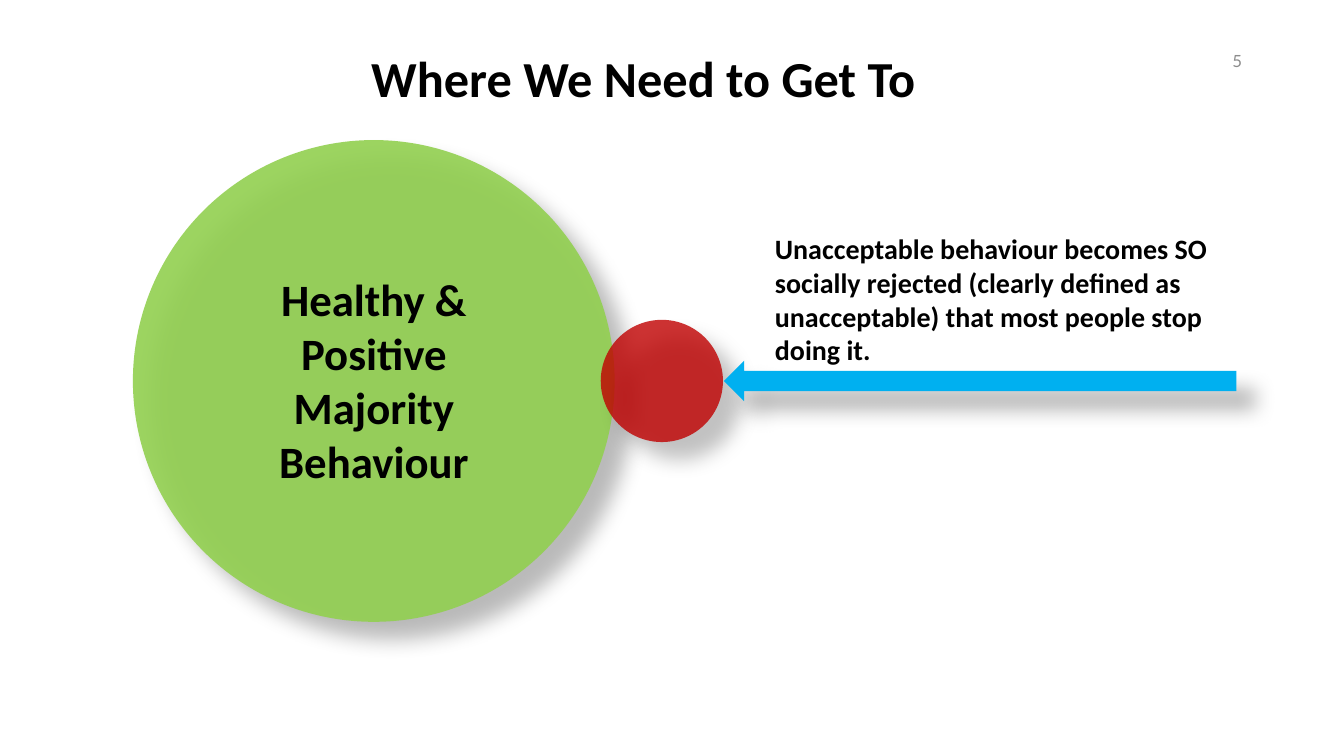
"""Build the slide on where majority behaviour needs to get to."""
import pptx
import pptx.util
import pptx.dml.color
import pptx.enum.shapes
import pptx.enum.text
from lxml import etree
from pptx.oxml.ns import qn

Cm, Pt = pptx.util.Cm, pptx.util.Pt
SHAPE = pptx.enum.shapes.MSO_SHAPE
ANCHOR = pptx.enum.text.MSO_ANCHOR
ALIGN = pptx.enum.text.PP_ALIGN
FIT = pptx.enum.text.MSO_AUTO_SIZE

TITLE = ("Where We Need to Get To", (9.1, 1.07, 14.66, 1.8))
MAJORITY = ("Healthy & Positive Majority Behaviour", (5.92, 6.73, 7.01, 5.74))
REJECTION = (
    "Unacceptable behaviour becomes SO socially rejected "
    "(clearly defined as unacceptable) that most people stop doing it.",
    (19.28, 5.72, 12.06, 3.68),
)
PAGE = ("5", (23.93, 1.02, 7.62, 1.02))

AXIS_Y = 9.6
MAJORITY_LEFT, MAJORITY_SIZE = 3.35, 12.14
MINORITY_LEFT, MINORITY_SIZE = 15.14, 3.08
ARROW_LEFT, ARROW_LENGTH, ARROW_HEIGHT = 18.24, 12.92, 1.02


def color(hex_code):
    return pptx.dml.color.RGBColor.from_string(hex_code)


def write(box, text, size, align=ALIGN.LEFT, font="Calibri", ink="000000", bold=True):
    frame = box.text_frame
    frame.vertical_anchor = ANCHOR.TOP
    frame.word_wrap = True
    paragraph = frame.paragraphs[0]
    paragraph.alignment = align
    run = paragraph.add_run()
    run.text = text
    run.font.name, run.font.size, run.font.bold = font, Pt(size), bold
    run.font.color.rgb = color(ink)
    return frame


def add_text(slide, content, size, **style):
    text, place = content
    return write(slide.shapes.add_textbox(*map(Cm, place)), text, size, **style)


def add_shadow(shape):
    shape.shadow.inherit = False
    effects = shape._element.spPr.find(qn("a:effectLst"))
    shadow = etree.SubElement(
        effects, qn("a:outerShdw"), blurRad=str(Pt(15)), dist=str(Pt(18)),
        dir=str(45 * 60000), algn="ctr", rotWithShape="0")
    black = etree.SubElement(shadow, qn("a:srgbClr"), val="000000")
    etree.SubElement(black, qn("a:alpha"), val="30000")


def add_on_axis(slide, kind, left, width, height, fill, opacity=100):
    shape = slide.shapes.add_shape(
        kind, Cm(left), Cm(AXIS_Y - height / 2), Cm(width), Cm(height))
    shape.fill.solid()
    shape.fill.fore_color.rgb = color(fill)
    shape.line.fill.background()
    if opacity < 100:
        tint = shape._element.spPr.find(qn("a:solidFill"))[0]
        etree.SubElement(tint, qn("a:alpha"), val=str(opacity * 1000))
    add_shadow(shape)
    return shape


def main():
    deck = pptx.Presentation()
    deck.slide_width, deck.slide_height = Cm(33.87), Cm(19.05)
    slide = deck.slides.add_slide(deck.slide_layouts[5])

    title = slide.shapes.title
    text, place = TITLE
    title.left, title.top, title.width, title.height = map(Cm, place)
    heading = write(title, text, 36)
    heading.word_wrap = False
    heading.auto_size = FIT.SHAPE_TO_FIT_TEXT

    add_on_axis(slide, SHAPE.OVAL, MAJORITY_LEFT, MAJORITY_SIZE, MAJORITY_SIZE, "92D050", 90)
    add_on_axis(slide, SHAPE.OVAL, MINORITY_LEFT, MINORITY_SIZE, MINORITY_SIZE, "C00000", 80)
    majority = add_text(slide, MAJORITY, 32, align=ALIGN.CENTER)
    majority.auto_size = FIT.SHAPE_TO_FIT_TEXT

    arrow = add_on_axis(
        slide, SHAPE.RIGHT_ARROW, ARROW_LEFT, ARROW_LENGTH, ARROW_HEIGHT, "00B0F0")
    arrow.rotation = 180
    rejection = add_text(slide, REJECTION, 20)
    rejection.auto_size = FIT.SHAPE_TO_FIT_TEXT

    page = add_text(
        slide, PAGE, 12, align=ALIGN.RIGHT, font="Lato", ink="8C8C8C", bold=False)
    page.vertical_anchor = ANCHOR.MIDDLE

    deck.save("out.pptx")


if __name__ == "__main__":
    main()
